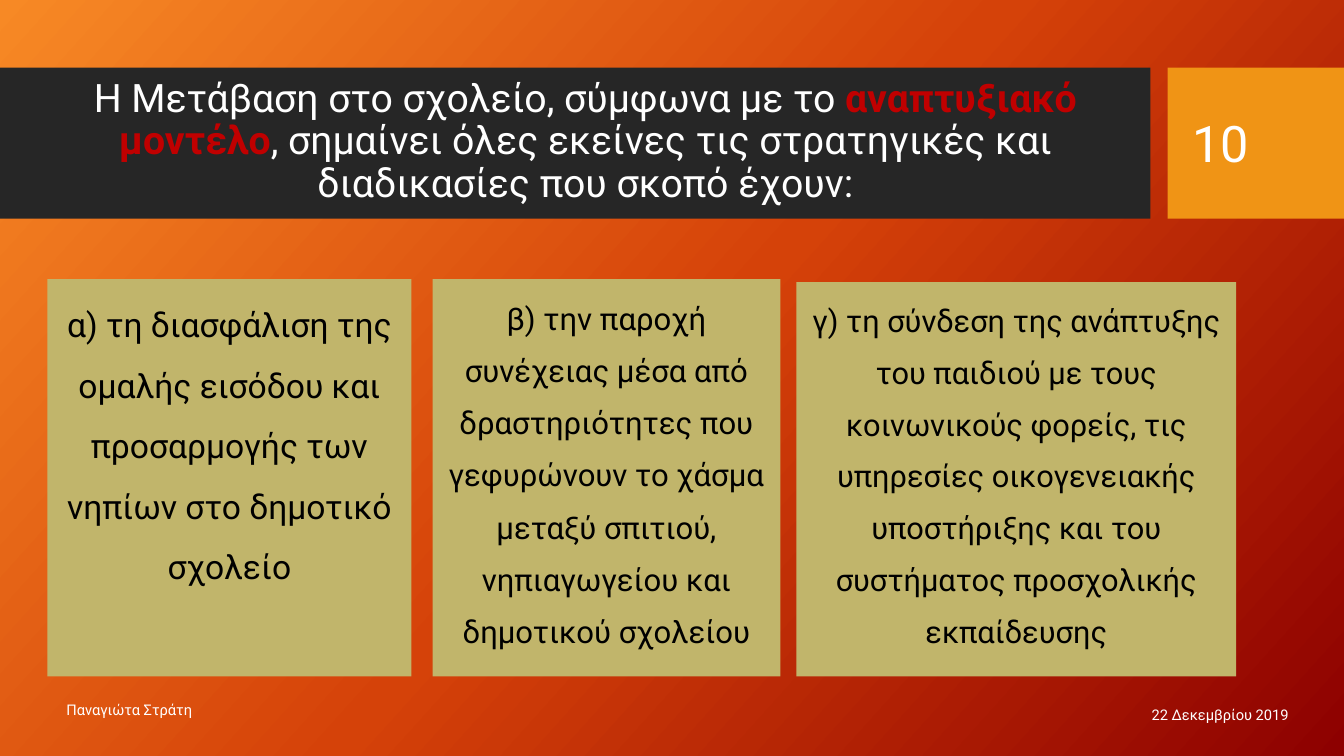
from copy import deepcopy

from pptx import Presentation
from pptx import util as u
from pptx.dml.color import RGBColor
from pptx.enum import shapes, text

FONT = "Roboto"
WHITE, BLACK, RED = "FFFFFF", "000000", "C00000"
DARK, AMBER, SAND = "262626", "F09415", "C1B56B"
LEFT, CENTER, RIGHT = text.PP_ALIGN.LEFT, text.PP_ALIGN.CENTER, text.PP_ALIGN.RIGHT
TOP, MIDDLE = text.MSO_ANCHOR.TOP, text.MSO_ANCHOR.MIDDLE

TITLE = [
    ("Η Μετάβαση στο σχολείο, σύμφωνα με το ", False),
    ("αναπτυξιακό μοντέλο", True),
    (", σημαίνει όλες εκείνες τις στρατηγικές και διαδικασίες που σκοπό έχουν:", False),
]
# Left, top, width, height, font size, line spacing, wording
GOALS = [
    (0.47, 2.77, 3.61, 3.94, 24, 1.5,
     "α) τη διασφάλιση της ομαλής εισόδου και προσαρμογής των νηπίων "
     "στο δημοτικό σχολείο"),
    (4.29, 2.77, 3.45, 3.94, 22.2, 1.4,
     "β) την παροχή συνέχειας μέσα από δραστηριότητες που γεφυρώνουν το χάσμα "
     "μεταξύ σπιτιού, νηπιαγωγείου και δημοτικού σχολείου"),
    (7.9, 2.8, 4.36, 3.91, 22, 1.4,
     "γ) τη σύνδεση της ανάπτυξης του παιδιού με τους κοινωνικούς φορείς, τις "
     "υπηρεσίες οικογενειακής υποστήριξης και του συστήματος προσχολικής εκπαίδευσης"),
]


def rgb(value):
    return RGBColor.from_string(value)


def set_background(s, colors, angle):
    """Fill the slide with evenly spaced gradient stops, angle clockwise."""
    fill = s.background.fill
    fill.gradient()
    fill.gradient_angle = 360 - angle
    stop_list = s.background._cSld.find(".//{*}gsLst")
    stop_list.insert(1, deepcopy(stop_list[0]))
    for i, (stop, color) in enumerate(zip(fill.gradient_stops, colors)):
        stop.position = i / (len(colors) - 1)
        stop.color.rgb = rgb(color)


def add_block(s, box, color):
    sp = s.shapes.add_shape(shapes.MSO_SHAPE.RECTANGLE, *map(u.Inches, box))
    sp.shadow.inherit = False
    sp.fill.solid()
    sp.fill.fore_color.rgb = rgb(color)
    sp.line.fill.background()
    return sp


def write(sp, runs, size, color, align=LEFT, anchor=MIDDLE, spacing=1.0):
    """Write one paragraph of (wording, highlighted) runs."""
    tf = sp.text_frame
    tf.word_wrap = True
    tf.vertical_anchor = anchor
    p = tf.paragraphs[0]
    p.alignment = align
    p.line_spacing = spacing
    p.font.name = FONT
    p.font.size = u.Pt(size)
    for wording, highlighted in runs:
        r = p.add_run()
        r.text = wording
        r.font.name = FONT
        r.font.size = u.Pt(size)
        r.font.bold = highlighted
        r.font.color.rgb = rgb(RED if highlighted else color)


def add_label(s, box, runs, size, align=LEFT, spacing=1.0):
    sp = s.shapes.add_textbox(*map(u.Inches, box))
    write(sp, runs, size, WHITE, align, spacing=spacing)


def main():
    prs = Presentation()
    prs.slide_width, prs.slide_height = u.Inches(13.33), u.Inches(7.5)
    s = prs.slides.add_slide(prs.slide_layouts[6])
    set_background(s, ["F78925", "D54209", "8D0000"], 42)

    # Title band and page number
    add_block(s, (0, 0.67, 11.41, 1.5), DARK)
    add_block(s, (11.58, 0.67, 1.75, 1.5), AMBER)
    add_label(s, (0.35, 0.82, 10.91, 1.18), TITLE, 28, CENTER, 0.9)
    add_label(s, (11.73, 0.82, 1.26, 1.19), [("10", False)], 36)

    # Three goals
    for *box, size, spacing, wording in GOALS:
        write(add_block(s, box, SAND), [(wording, False)], size, BLACK,
              CENTER, TOP, spacing)

    # Footer
    add_label(s, (0.56, 6.84, 7.51, 0.4), [("Παναγιώτα Στράτη", False)], 10.5)
    add_label(s, (9.88, 6.98, 3, 0.21), [("22 Δεκεμβρίου 2019", False)], 10.5, RIGHT)

    prs.save("out.pptx")


if __name__ == "__main__":
    main()
